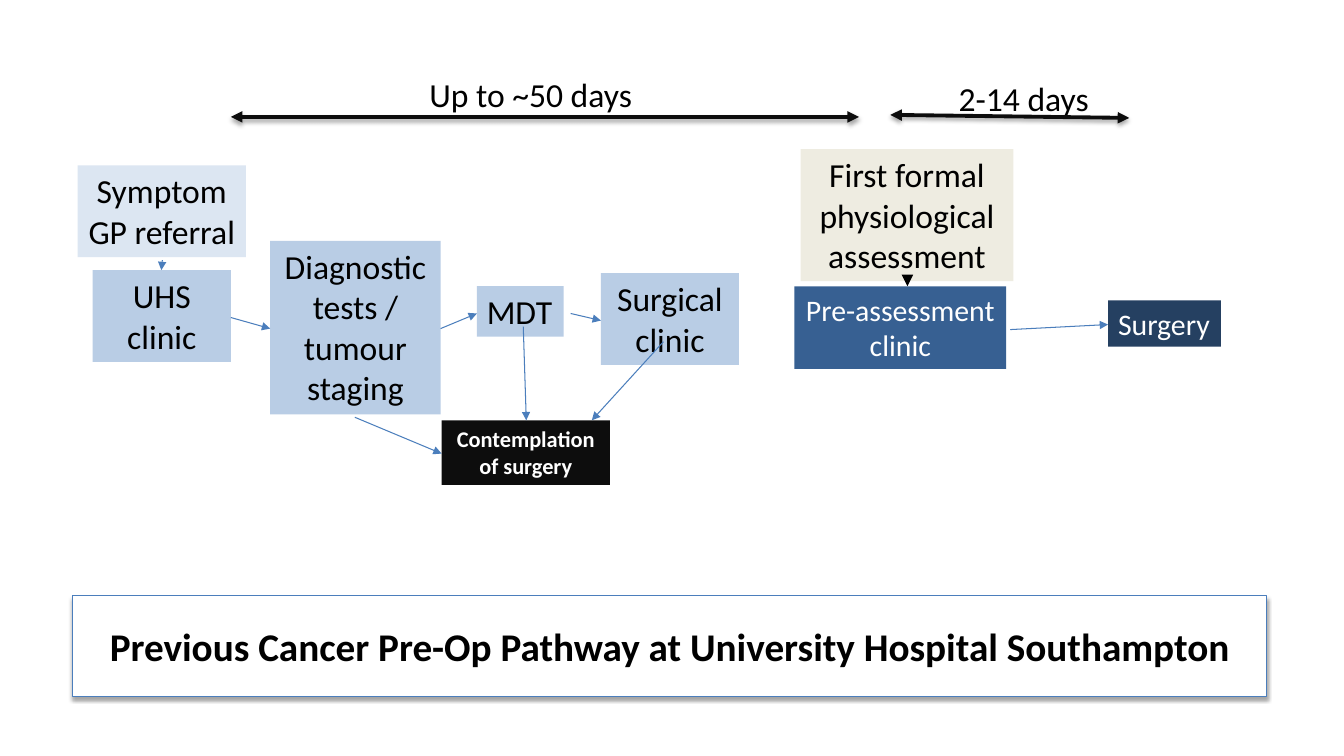
from lxml import etree
from pptx import Presentation
from pptx.dml.color import RGBColor
from pptx.enum.shapes import MSO_CONNECTOR, MSO_SHAPE
from pptx.enum.text import MSO_ANCHOR, MSO_AUTO_SIZE, PP_ALIGN
from pptx.oxml.ns import qn
from pptx.util import Inches, Pt

LINE, RECT = MSO_CONNECTOR.STRAIGHT, MSO_SHAPE.RECTANGLE
TOP, MIDDLE = MSO_ANCHOR.TOP, MSO_ANCHOR.MIDDLE
GROW, FIXED = MSO_AUTO_SIZE.SHAPE_TO_FIT_TEXT, MSO_AUTO_SIZE.NONE
LEFT, CENTER = PP_ALIGN.LEFT, PP_ALIGN.CENTER

BLACK, WHITE, INK, BLUE = "000000", "FFFFFF", "0D0D0D", "4B7EBC"
PALE, LIGHT, MID, NAVY, SAND = "DCE6F2", "B9CDE5", "376092", "254061", "EEECE1"

TITLE = "Previous Cancer Pre-Op Pathway at University Hospital Southampton"
FRAME = (0.72, 5.91, 11.84, 1)

DARK = {"size": 24, "color": BLACK}
PLAIN = {"size": 21.3, "color": WHITE}
SMALL = {"size": 16, "color": WHITE, "bold": True}
HEAD = {"size": 28, "color": BLACK, "bold": True}

STEPS = [
    ("Contemplation of surgery", (4.38, 4.17, 1.67, 0.64), INK, SMALL, True, CENTER),
    ("Symptom\nGP referral", (0.77, 1.64, 1.67, 0.91), PALE, DARK, False, CENTER),
    ("UHS clinic", (0.92, 2.68, 1.37, 0.91), LIGHT, DARK, True, CENTER),
    ("Diagnostic tests / tumour staging", (2.68, 2.39, 1.69, 1.72), LIGHT, DARK, True, CENTER),
    ("MDT", (4.73, 2.84, 0.86, 0.5), LIGHT, DARK, False, LEFT),
    ("Surgical clinic", (5.96, 2.71, 1.37, 0.91), LIGHT, DARK, True, CENTER),
    ("Pre-assessment\nclinic", (7.88, 2.84, 2.1, 0.82), MID, PLAIN, False, CENTER),
    ("Surgery", (10.99, 2.98, 1.12, 0.46), NAVY, PLAIN, False, LEFT),
    ("First formal physiological assessment", (7.94, 1.48, 2.11, 1.31), SAND, DARK, True, CENTER),
]
TIMES = [
    ("Up to ~50 days", (4.16, 0.68, 2.23, 0.5)),
    ("2-14 days", (9.41, 0.72, 1.5, 0.5)),
]
FLOWS = [
    (1.61, 2.58, 1.6, 2.68),
    (2.29, 3.15, 2.68, 3.26),
    (4.37, 3.26, 4.73, 3.11),
    (3.52, 4.14, 4.38, 4.5),
    (5.19, 3.24, 5.22, 4.17),
    (6.58, 3.39, 5.87, 4.17),
    (5.66, 3.11, 5.96, 3.18),
    (10.02, 3.27, 10.99, 3.22),
]
SPANS = [(2.29, 1.16, 8.52, 1.16), (8.83, 1.14, 11.2, 1.17)]
DROP = (9, 2.82, 9, 2.84)


def paint(color):
    return RGBColor.from_string(color)


def inches(spot):
    return [Inches(n) for n in spot]


def effect(shape, shadow):
    fx = etree.SubElement(shape._element.spPr, qn("a:effectLst"))
    if shadow:
        cast = etree.SubElement(fx, qn("a:outerShdw"), blurRad=str(Pt(3.1)),
                                dist=str(Pt(1.8)), dir="5400000", rotWithShape="0")
        tint = etree.SubElement(cast, qn("a:srgbClr"), val=BLACK)
        etree.SubElement(tint, qn("a:alpha"), val="35000")


def write(shape, text, style, wrap=True, align=CENTER, anchor=TOP, fit=GROW):
    frame = shape.text_frame
    frame.text = text
    form = {"word_wrap": wrap, "vertical_anchor": anchor, "auto_size": fit}
    for key, value in form.items():
        setattr(frame, key, value)
    look = {"name": "Calibri", "size": Pt(style["size"]), "bold": style.get("bold", False)}
    for para in frame.paragraphs:
        para.alignment = align
        for key, value in look.items():
            setattr(para.font, key, value)
        para.font.color.rgb = paint(style["color"])


def fill(shape, color):
    shape.fill.solid()
    shape.fill.fore_color.rgb = paint(color)


def stroke(line, color, width):
    line.color.rgb = paint(color)
    line.width = Pt(width)


def arrow(slide, spot, color, width, ends=("tailEnd",), shadow=False):
    link = slide.shapes.add_connector(LINE, *inches(spot))
    stroke(link.line, color, width)
    for end in ends:
        etree.SubElement(link.line._get_or_add_ln(), qn("a:" + end), type="triangle")
    effect(link, shadow)


def main():
    deck = Presentation()
    deck.slide_width, deck.slide_height = inches((13.33, 7.5))
    slide = deck.slides.add_slide(deck.slide_layouts[5])

    title = slide.shapes.title
    title.left, title.top, title.width, title.height = inches(FRAME)
    fill(title, WHITE)
    stroke(title.line, BLUE, 0.75)
    effect(title, True)
    write(title, TITLE, HEAD, anchor=MIDDLE, fit=FIXED)

    for text, spot, color, style, wrap, align in STEPS:
        box = slide.shapes.add_shape(RECT, *inches(spot))
        box.shadow.inherit = False
        fill(box, color)
        box.line.fill.background()
        write(box, text, style, wrap, align)

    for text, spot in TIMES:
        write(slide.shapes.add_textbox(*inches(spot)), text, DARK, False, LEFT)

    for spot in FLOWS:
        arrow(slide, spot, BLUE, 0.75)
    for spot in SPANS:
        arrow(slide, spot, INK, 2.75, ("headEnd", "tailEnd"), True)
    arrow(slide, DROP, BLACK, 2.75)

    deck.save("out.pptx")


if __name__ == "__main__":
    main()
